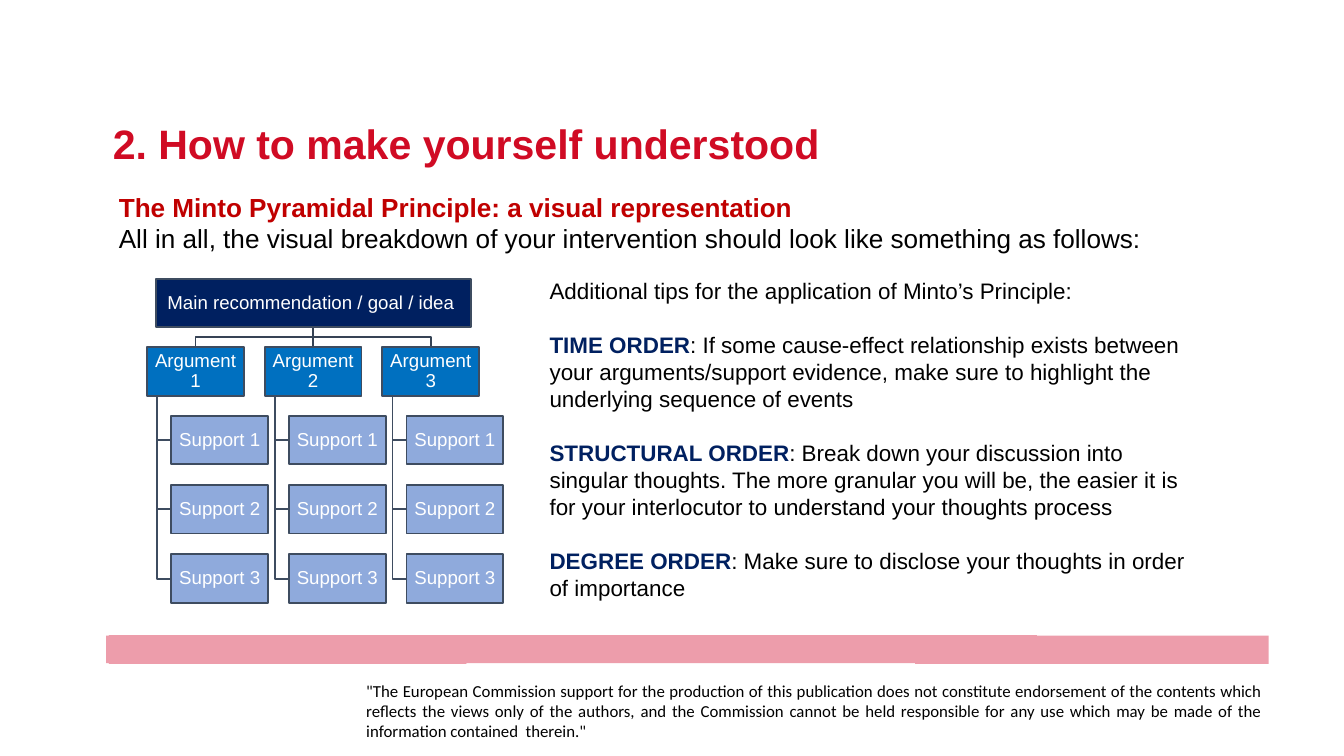
from typing import NamedTuple

from pptx import Presentation
from pptx.dml.color import RGBColor
from pptx.enum.shapes import MSO_CONNECTOR, MSO_SHAPE
from pptx.enum.text import MSO_ANCHOR, PP_ALIGN
from pptx.oxml.ns import qn
from pptx.util import Inches, Pt
from lxml import etree

BLACK = RGBColor(0x00, 0x00, 0x00)
WHITE = RGBColor(0xFF, 0xFF, 0xFF)
RED = RGBColor(0xD0, 0x0B, 0x24)
DARK_RED = RGBColor(0xC0, 0x00, 0x00)
NAVY = RGBColor(0x00, 0x20, 0x60)
BLUE = RGBColor(0x00, 0x70, 0xC0)
LIGHT_BLUE = RGBColor(0x8F, 0xAA, 0xDC)
PINK = RGBColor(0xED, 0x9D, 0xAB)
OUTLINE = RGBColor(0x3E, 0x4C, 0x60)
BRANCH = RGBColor(0x36, 0x43, 0x55)

Point = tuple[float, float]


class Box(NamedTuple):
    left: float
    top: float
    width: float
    height: float


class Run(NamedTuple):
    text: str
    size: float
    color: RGBColor = BLACK
    bold: bool = False
    font: str = "Arial"


class Node(NamedTuple):
    text: str
    box: Box
    fill: RGBColor


def add_run(p, run: Run) -> None:
    r = p.add_run()
    r.text = run.text
    r.font.name = run.font
    r.font.size = Pt(run.size)
    r.font.bold = run.bold
    r.font.color.rgb = run.color


def add_text(s, box: Box, paragraphs: list[list[Run]], gap: float = 0,
             margins: Point = (0.1, 0.05)):
    """Add a text box; gap is the space in points between paragraphs."""
    tf = s.shapes.add_textbox(*map(Inches, box)).text_frame
    tf.word_wrap = True
    tf.margin_left = tf.margin_right = Inches(margins[0])
    tf.margin_top = tf.margin_bottom = Inches(margins[1])
    for i, runs in enumerate(paragraphs):
        p = tf.add_paragraph() if i else tf.paragraphs[0]
        if i and gap:
            p.space_before = Pt(gap)
        for run in runs:
            add_run(p, run)
    return tf


def add_path(s, points: list[Point], closed: bool = False):
    fb = s.shapes.build_freeform(*map(Inches, points[0]))
    fb.add_line_segments([(Inches(x), Inches(y)) for x, y in points[1:]], close=closed)
    sp = fb.convert_to_shape()
    sp.shadow.inherit = False
    return sp


def add_branch(s, points: list[Point], color: RGBColor) -> None:
    """Join the points with a line: a connector if straight, else a bent path."""
    if len(points) == 2:
        ends = [Inches(v) for point in points for v in point]
        sp = s.shapes.add_connector(MSO_CONNECTOR.STRAIGHT, *ends)
        etree.SubElement(sp._element.spPr, qn("a:effectLst"))
    else:
        sp = add_path(s, points)
        sp.fill.background()
    sp.line.color.rgb = color
    sp.line.width = Pt(2)


def add_node(s, node: Node) -> None:
    sp = s.shapes.add_shape(MSO_SHAPE.RECTANGLE, *map(Inches, node.box))
    sp.shadow.inherit = False
    sp.fill.solid()
    sp.fill.fore_color.rgb = node.fill
    sp.line.color.rgb = OUTLINE
    sp.line.width = Pt(2)
    tf = sp.text_frame
    tf.word_wrap = True
    tf.vertical_anchor = MSO_ANCHOR.MIDDLE
    tf.margin_left = tf.margin_right = tf.margin_top = tf.margin_bottom = Inches(0.01)
    p = tf.paragraphs[0]
    p.alignment = PP_ALIGN.CENTER
    p.line_spacing = 0.9
    add_run(p, Run(node.text, 20, WHITE))


def add_pyramid(s) -> None:
    width, height = 1.44, 0.72
    root = Box(2.32, 4.15, 4.69, height)
    root_x, root_bottom = 4.66, root.top + height
    arg_left, arg_top, col_pitch = 2.19, 5.17, 1.75
    support_top, row_pitch, indent, spine = 6.19, 1.03, 0.36, 0.15
    fork_y = (root_bottom + arg_top) / 2

    nodes = [Node("Main recommendation / goal / idea ", root, NAVY)]
    for col in range(3):
        left = arg_left + col * col_pitch
        center = left + width / 2
        nodes.append(Node(f"Argument {col + 1}", Box(left, arg_top, width, height), BLUE))
        bends = [] if col == 1 else [(root_x, fork_y), (center, fork_y)]
        end_x = root_x if col == 1 else center
        add_branch(s, [(root_x, root_bottom), *bends, (end_x, arg_top)], BRANCH)
        for row in range(3):
            top = support_top + row * row_pitch
            box = Box(left + indent, top, width, height)
            nodes.append(Node(f"Support {row + 1}", box, LIGHT_BLUE))
            x, y = left + spine, top + height / 2
            add_branch(s, [(x, arg_top + height), (x, y), (box.left, y)], OUTLINE)
    for node in nodes:
        add_node(s, node)


def add_footer(s) -> None:
    band = add_path(s, [
        (18.88, 9.46), (15.43, 9.46), (15.43, 9.45), (1.62, 9.45), (1.62, 9.46),
        (1.58, 9.46), (1.58, 9.87), (1.62, 9.87), (1.62, 9.88), (6.94, 9.88),
        (6.94, 9.87), (13.62, 9.87), (13.62, 9.88), (18.88, 9.88)], closed=True)
    band.fill.solid()
    band.fill.fore_color.rgb = PINK
    band.line.fill.background()
    disclaimer = (
        '"The European Commission support for the production of this publication does not '
        "constitute endorsement of the contents which reflects the views only of the authors, "
        "and the Commission cannot be held responsible for any use which may be made of the "
        'information contained  therein."')
    tf = add_text(s, Box(5.45, 10.15, 13.33, 0.76),
                  [[Run(disclaimer, 18, font="Calibri")]], margins=(0, 0))
    tf.paragraphs[0].alignment = PP_ALIGN.JUSTIFY
    tf.paragraphs[0].line_spacing = 0.98


TIPS = [
    ("TIME ORDER", ": If some cause-effect relationship exists between your arguments/support "
     "evidence, make sure to highlight the underlying sequence of events"),
    ("STRUCTURAL ORDER", ": Break down your discussion into singular thoughts. The more granular "
     "you will be, the easier it is for your interlocutor to understand your thoughts process"),
    ("DEGREE ORDER", ": Make sure to disclose your thoughts in order of importance"),
]


def main() -> None:
    prs = Presentation()
    prs.slide_width, prs.slide_height = Inches(20), Inches(11.25)
    s = prs.slides.add_slide(prs.slide_layouts[6])
    add_footer(s)
    add_text(s, Box(1.58, 1.72, 13.46, 0.84),
             [[Run("2. How to make yourself understood", 44, RED, True)]])
    add_text(s, Box(1.67, 2.8, 17.35, 1.51), [
        [Run("The Minto Pyramidal Principle: a visual representation", 28, DARK_RED, True)],
        [Run("All in all, the visual breakdown of your intervention should look like "
             "something as follows:", 28)]])
    add_pyramid(s)
    intro = [Run("Additional tips for the application of Minto’s Principle:", 24)]
    tips = [[Run(name, 24, NAVY, True), Run(advice, 24)] for name, advice in TIPS]
    add_text(s, Box(8.08, 4.08, 9.94, 4.95), [intro, *tips], gap=29)
    prs.save("out.pptx")


if __name__ == "__main__":
    main()
